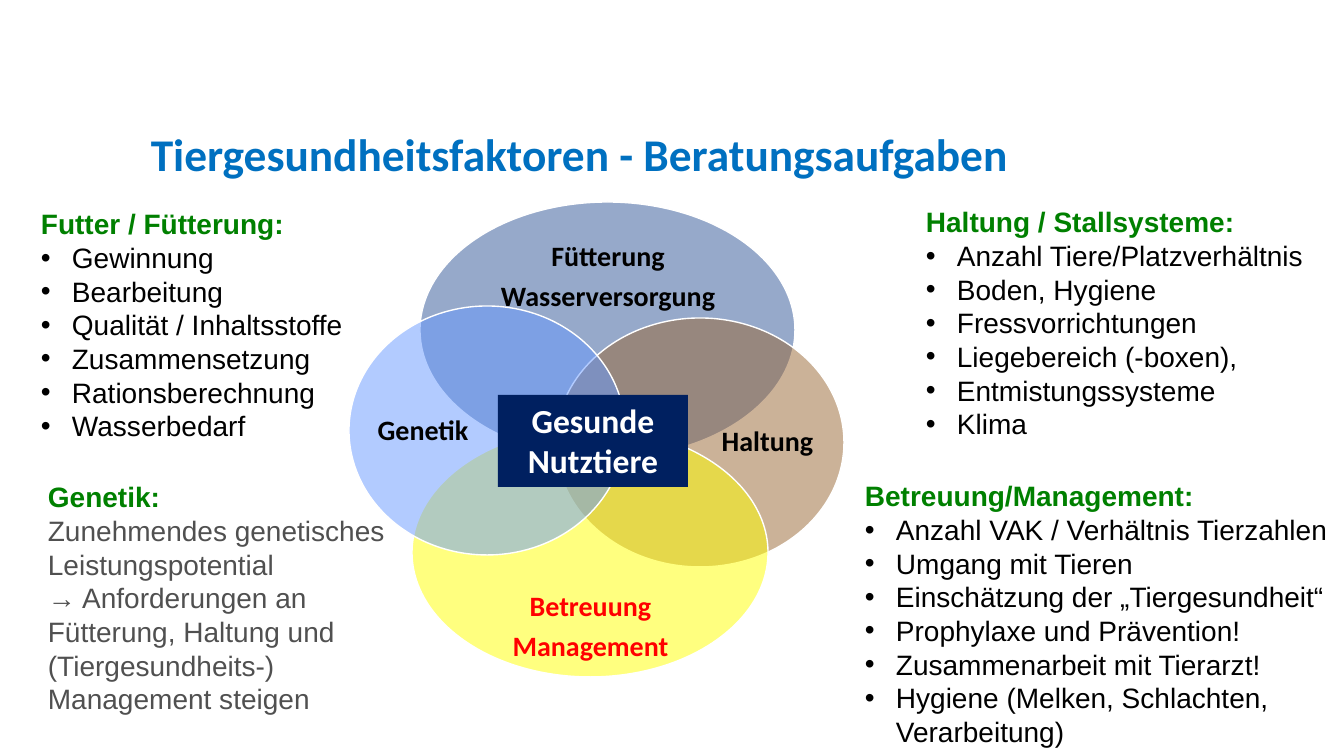
import pptx
import pptx.util
import pptx.dml.color
import pptx.enum.shapes
import pptx.enum.text
import pptx.oxml
import pptx.oxml.ns
import lxml.etree

SCALE = 914400 / 100.8
THEME = {
    "title": "0070C0", "head": "008000", "text": "000000", "soft": "505050",
    "alert": "FF0000", "light": "FFFFFF", "core": "002060",
    "feed": "2F5597", "barn": "996633", "care": "FFFF00", "gene": "6699FF",
    "label font": "Calibri", "list font": "Arial",
    "title size": 32.4, "core size": 24, "size": 20,
}
ALIGN = pptx.enum.text.PP_ALIGN
ANCHOR = pptx.enum.text.MSO_ANCHOR
SHAPE = pptx.enum.shapes.MSO_SHAPE


def place(kind, box, fill=None):
    """Add a preset shape, or a text box if kind is None; box is in px."""
    box = [round(n * SCALE) for n in box]
    if kind is None:
        shape = slide.shapes.add_textbox(*box)
    else:
        shape = slide.shapes.add_shape(kind, *box)
        shape.shadow.inherit = False
        shape.fill.solid()
        shape.fill.fore_color.rgb = pptx.dml.color.RGBColor.from_string(THEME[fill])
        shape.line.fill.background()
    shape.text_frame.word_wrap = True
    return shape


def write(shape, lines, color, font="label font", size="size", bold=True, align=ALIGN.CENTER):
    """Append one paragraph for each line and return the paragraphs."""
    frame = shape.text_frame
    paras = []
    for line in lines:
        first = frame.paragraphs[0]
        para = frame.add_paragraph() if first.runs else first
        para.alignment = align
        run = para.add_run()
        run.text = line
        run.font.name = THEME[font]
        run.font.size = pptx.util.Pt(THEME[size])
        run.font.bold = bold
        run.font.color.rgb = pptx.dml.color.RGBColor.from_string(THEME[color])
        paras.append(para)
    return paras


deck = pptx.Presentation()
deck.slide_width = round(1344 * SCALE)
deck.slide_height = round(756 * SCALE)
slide = deck.slides.add_slide(deck.slide_layouts[6])

title = place(None, (0, 128, 1159, 57))
title.text_frame.vertical_anchor = ANCHOR.MIDDLE
write(title, ["Tiergesundheitsfaktoren - Beratungsaufgaben"], "title", size="title size")[0].line_spacing = 0.9

circles = [
    ("feed", (420, 202, 375, 256), (464, 236, 288, 82), ["Fütterung", "Wasserversorgung"], "text"),
    ("barn", (556, 318, 288, 249), (712, 347, 111, 191), ["Haltung"], "text"),
    ("care", (412, 428, 356, 249), (454, 586, 273, 82), ["Betreuung", "Management"], "alert"),
    ("gene", (349, 306, 276, 249), (370, 336, 106, 191), ["Genetik"], "text"),
]
for fill, oval, box, lines, color in circles:
    shape = place(SHAPE.OVAL, oval, fill)
    shape.line.color.rgb = pptx.dml.color.RGBColor.from_string(THEME["light"])
    shape.line.width = pptx.util.Pt(1)
    tint = shape.fill._xPr.find(".//" + pptx.oxml.ns.qn("a:srgbClr"))
    lxml.etree.SubElement(tint, pptx.oxml.ns.qn("a:alpha"), val="50000")

    label = place(None, box)
    frame = label.text_frame
    frame.vertical_anchor = ANCHOR.MIDDLE
    frame.margin_left = frame.margin_right = frame.margin_top = frame.margin_bottom = 0
    for para in write(label, lines, color):
        para.line_spacing = 0.9
        para.space_after = pptx.util.Pt(7)

core = place(SHAPE.RECTANGLE, (498, 395, 190, 92), "core")
core.text_frame.vertical_anchor = ANCHOR.TOP
write(core, ["Gesunde Nutztiere"], "light", size="core size")

blocks = [
    ((38, 475, 387, 248), "Genetik:", False, [
        "Zunehmendes genetisches Leistungspotential",
        "→ Anforderungen an Fütterung, Haltung und (Tiergesundheits-) Management steigen"]),
    ((855, 474, 485, 281), "Betreuung/Management:", True, [
        "Anzahl VAK / Verhältnis Tierzahlen", "Umgang mit Tieren",
        "Einschätzung der „Tiergesundheit“", "Prophylaxe und Prävention!",
        "Zusammenarbeit mit Tierarzt!", "Hygiene (Melken, Schlachten, Verarbeitung)"]),
    ((31, 202, 323, 248), "Futter / Fütterung:", True, [
        "Gewinnung", "Bearbeitung", "Qualität / Inhaltsstoffe",
        "Zusammensetzung", "Rationsberechnung", "Wasserbedarf"]),
    ((916, 200, 401, 248), "Haltung / Stallsysteme:", True, [
        "Anzahl Tiere/Platzverhältnis", "Boden, Hygiene", "Fressvorrichtungen",
        "Liegebereich (-boxen),", "Entmistungssysteme", "Klima"]),
]
for box, head, listed, lines in blocks:
    block = place(None, box)
    write(block, [head], "head", "list font", align=ALIGN.LEFT)
    color = "text" if listed else "soft"
    for para in write(block, lines, color, "list font", bold=False, align=ALIGN.LEFT):
        if listed:
            props = para._p.get_or_add_pPr()
            indent = round(31 * SCALE)
            props.set("marL", str(indent))
            props.set("indent", str(-indent))
            lxml.etree.SubElement(props, pptx.oxml.ns.qn("a:buFont"), typeface="Arial")
            lxml.etree.SubElement(props, pptx.oxml.ns.qn("a:buChar"), char="•")

deck.save("out.pptx")
